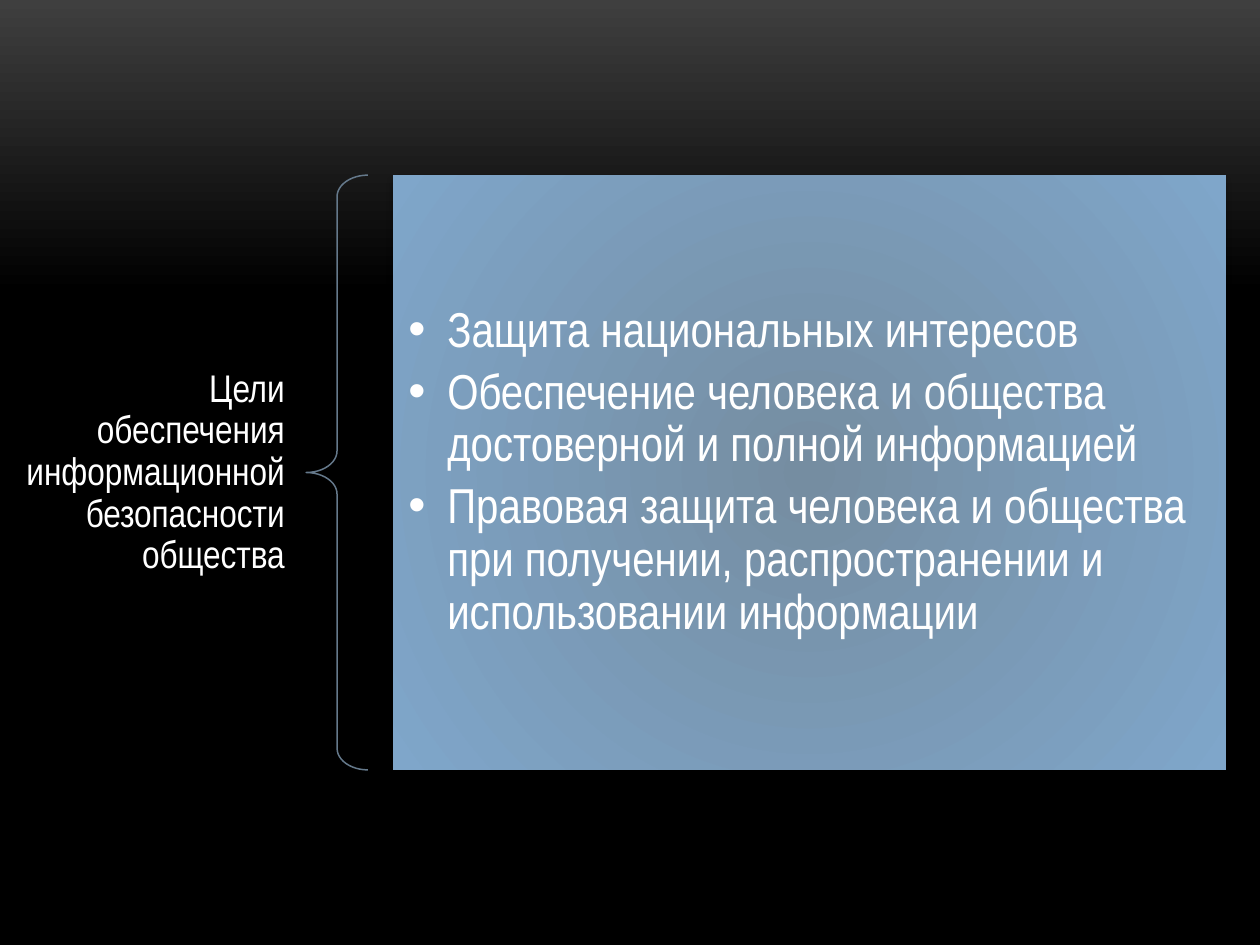
from lxml import etree
from pptx import Presentation
from pptx.dml.color import RGBColor
from pptx.enum.shapes import MSO_SHAPE
from pptx.enum.text import MSO_ANCHOR, PP_ALIGN
from pptx.oxml import parse_xml
from pptx.oxml.ns import nsdecls, qn
from pptx.util import Inches, Pt

BRACE, RECTANGLE = MSO_SHAPE.LEFT_BRACE, MSO_SHAPE.RECTANGLE
MIDDLE, LEFT, RIGHT = MSO_ANCHOR.MIDDLE, PP_ALIGN.LEFT, PP_ALIGN.RIGHT

TITLE = ["Цели обеспечения информационной безопасности общества"]
GOALS = [
    "Защита национальных интересов",
    "Обеспечение человека и общества достоверной и полной информацией",
    "Правовая защита человека и общества при получении, распространении и использовании информации",
]
TITLE_BOX = (0, 2.89, 2.43, 1.73)
BRACE_BOX = (2.43, 1.39, 0.49, 4.72)
PANEL_BOX = (3.12, 1.39, 6.61, 4.72)
BACKGROUND_STOPS = [(0, "3F3F3F"), (0.31, "000000")]
PANEL_STOPS = [(0, "758DA1"), (1, "7FA6CA")]
SHADOW = """<a:effectLst %s><a:outerShdw blurRad="50800" dist="43180" dir="5400000" rotWithShape="0">
<a:srgbClr val="000000"><a:alpha val="40000"/></a:srgbClr></a:outerShdw></a:effectLst>""" % nsdecls("a")


def color(value):
    return RGBColor.from_string(value)


def lengths(box):
    return [Inches(value) for value in box]


def set_gradient(fill, stops):
    fill.gradient()
    for stop, (position, value) in zip(fill.gradient_stops, stops):
        stop.position = position
        stop.color.rgb = color(value)


def add_bullet(paragraph, indent):
    properties = paragraph._p.get_or_add_pPr()
    properties.set("marL", str(Inches(indent)))
    properties.set("indent", str(-Inches(indent)))
    etree.SubElement(properties, qn("a:buFont")).set("typeface", "Arial")
    etree.SubElement(properties, qn("a:buChar")).set("char", "•")


def add_text(slide, box, texts, size, align, margins, space_after, indent=None):
    frame = slide.shapes.add_textbox(*lengths(box)).text_frame
    horizontal, vertical = lengths(margins)
    frame_format = {
        "word_wrap": True, "vertical_anchor": MIDDLE,
        "margin_left": horizontal, "margin_right": horizontal,
        "margin_top": vertical, "margin_bottom": vertical,
    }
    paragraph_format = {"alignment": align, "line_spacing": 0.9, "space_after": Pt(space_after)}
    font_format = {"name": "Arial Narrow", "size": Pt(size)}
    for name, value in frame_format.items():
        setattr(frame, name, value)
    for index, text in enumerate(texts):
        paragraph = frame.add_paragraph() if index else frame.paragraphs[0]
        if indent:
            add_bullet(paragraph, indent)
        for name, value in paragraph_format.items():
            setattr(paragraph, name, value)
        run = paragraph.add_run()
        run.text = text
        for name, value in font_format.items():
            setattr(run.font, name, value)
        run.font.color.rgb = color("FFFFFF")


def add_brace(slide):
    brace = slide.shapes.add_shape(BRACE, *lengths(BRACE_BOX))
    brace.shadow.inherit = False
    brace.adjustments[0] = 0.35
    brace.fill.background()
    brace.line.color.rgb = color("65798B")
    brace.line.width = Pt(0.85)


def add_panel(slide):
    panel = slide.shapes.add_shape(RECTANGLE, *lengths(PANEL_BOX))
    set_gradient(panel.fill, PANEL_STOPS)
    panel.line.fill.background()
    properties = panel._element.spPr
    gradient = properties.find(qn("a:gradFill"))
    gradient.remove(gradient.find(qn("a:lin")))
    circle = etree.SubElement(gradient, qn("a:path"))
    circle.set("path", "circle")
    center = etree.SubElement(circle, qn("a:fillToRect"))
    for side in "ltrb":
        center.set(side, "50000")
    properties.append(parse_xml(SHADOW))


def main():
    presentation = Presentation()
    presentation.slide_width, presentation.slide_height = Inches(10), Inches(7.5)
    slide = presentation.slides.add_slide(presentation.slide_layouts[6])
    background = slide.background.fill
    set_gradient(background, BACKGROUND_STOPS)
    background.gradient_angle = 270
    add_text(slide, TITLE_BOX, TITLE, 22, RIGHT, (0.17, 0.06), 0)
    add_brace(slide)
    add_panel(slide)
    add_text(slide, PANEL_BOX, GOALS, 28, LEFT, (0.12, 0.12), 4.8, indent=0.31)
    presentation.save("out.pptx")


if __name__ == "__main__":
    main()
